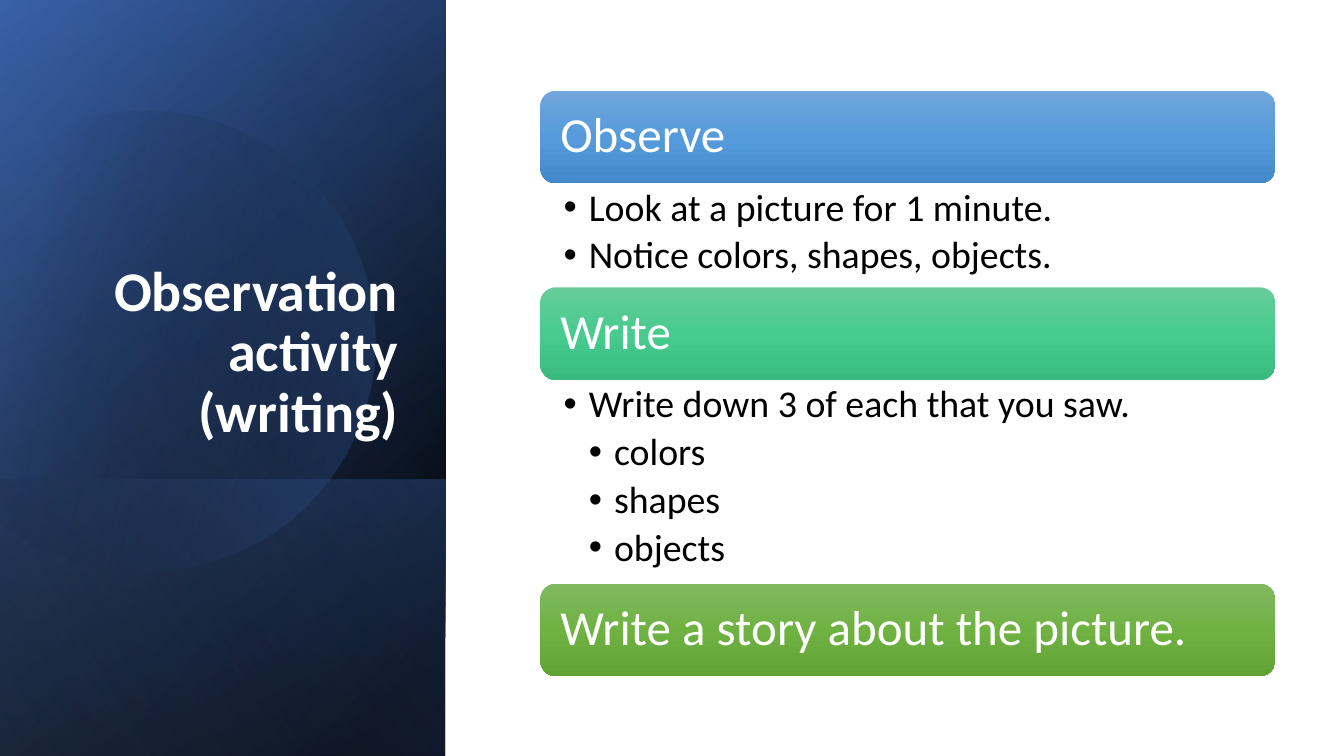
from math import cos, radians, sin

from pptx import Presentation
from pptx.dml.color import RGBColor
from pptx.enum.shapes import MSO_SHAPE
from pptx.enum.text import MSO_ANCHOR, MSO_AUTO_SIZE, PP_ALIGN
from pptx.oxml import parse_xml
from pptx.oxml.ns import nsdecls, qn
from pptx.util import Pt

TITLE = "Observation activity (writing)"
STEPS = [
    ("Observe", [(1, "Look at a picture for 1 minute."),
                 (1, "Notice colors, shapes, objects.")]),
    ("Write", [(1, "Write down 3 of each that you saw."),
               (2, "colors"), (2, "shapes"), (2, "objects")]),
    ("Write a story about the picture.", []),
]

THEME = {
    "font": "Calibri",
    "light": RGBColor(255, 255, 255),
    "dark": RGBColor(0, 0, 0),
    "title_size": 40,
    "heading_size": 35,
    "list_size": 27,
    "headings": [
        [(0, "71A6DB", 100), (50, "559BDB", 100), (100, "448ACA", 100)],
        [(0, "67CC9A", 100), (50, "47CB8E", 100), (100, "39BB7F", 100)],
        [(0, "81B861", 100), (50, "6FB242", 100), (100, "62A336", 100)],
    ],
    "panel_base": [(8, "000000", 100), (100, "2F5597", 100)],
    "panel_glow": [(0, "000000", 0), (99, "4472C4", 46)],
    "panel_foot": [(2, "4472C4", 29), (100, "000000", 30)],
    "panel_disc": [(29, "000000", 0), (100, "4472C4", 43)],
    "panel_sheen": [(0, "000000", 0), (99, "8FAADC", 11)],
}

SLIDE_WIDTH, SLIDE_HEIGHT = 960, 540
PANEL_WIDTH = 318.2
FOOT_TOP = 342.7
STEP_LEFT, STEP_TOP, STEP_WIDTH, HEADING_HEIGHT = 386, 64.8, 525, 66.2
LIST_LINE, LIST_MARGIN = 35.6, 3
INDENT = 18

DISC_TURN = -16.1
DISC_CENTER = (1.585, 3.345)
DISC_START = (1.49, 1.1)
DISC_ARCS = [
    ((2.46, 1.12), (3.35, 1.77), (3.63, 2.75)),
    ((3.98, 3.97), (3.28, 5.23), (2.07, 5.58)),
    ((1.31, 5.8), (0.53, 5.61), (-0.03, 5.14)),
    ((-0.15, 5.03),),
    ((-0.15, 1.75),),
    ((0, 1.61),),
    ((0.23, 1.42), (0.5, 1.28), (0.8, 1.19)),
    ((1.03, 1.13), (1.26, 1.1), (1.49, 1.1)),
]
ARC_STEPS = 16


def paint(shape, stops, angle):
    shape.shadow.inherit = False
    shape.line.fill.background()
    shape.fill.solid()
    stop_xml = "".join(
        f'<a:gs pos="{position * 1000}"><a:srgbClr val="{color}">'
        f'<a:alpha val="{opacity * 1000}"/></a:srgbClr></a:gs>'
        for position, color, opacity in stops)
    gradient = parse_xml(
        f'<a:gradFill {nsdecls("a")} rotWithShape="1"><a:gsLst>{stop_xml}</a:gsLst>'
        f'<a:lin ang="{angle * 60000}" scaled="0"/></a:gradFill>')
    properties = shape._element.spPr
    properties.replace(properties.find(qn("a:solidFill")), gradient)


def place(shape, left, top, width, height):
    shape.left, shape.top = Pt(left), Pt(top)
    shape.width, shape.height = Pt(width), Pt(height)


def set_frame(frame, anchor, left, top, right, bottom):
    frame.word_wrap = True
    frame.auto_size = MSO_AUTO_SIZE.NONE
    frame.vertical_anchor = anchor
    frame.margin_left, frame.margin_top = Pt(left), Pt(top)
    frame.margin_right, frame.margin_bottom = Pt(right), Pt(bottom)


def style(paragraph, size, color, align=PP_ALIGN.LEFT, bold=False):
    paragraph.alignment = align
    paragraph.line_spacing = 0.9
    paragraph.space_before = Pt(0)
    for run in paragraph.runs:
        run.font.name = THEME["font"]
        run.font.size = Pt(size)
        run.font.bold = bold
        run.font.color.rgb = color


def add_panel(shapes, top, stops, angle):
    height = SLIDE_HEIGHT - top
    panel = shapes.add_shape(
        MSO_SHAPE.RECTANGLE, Pt((PANEL_WIDTH - height) / 2),
        Pt(top + (height - PANEL_WIDTH) / 2), Pt(height), Pt(PANEL_WIDTH))
    panel.rotation = 90
    panel._element.spPr.xfrm.set("flipH", "1")
    paint(panel, stops, angle)


def disc_outline():
    points = [DISC_START]
    for arc in DISC_ARCS:
        if len(arc) == 1:
            points.append(arc[0])
            continue
        controls = (points[-1], *arc)
        for step in range(1, ARC_STEPS + 1):
            t = step / ARC_STEPS
            weights = ((1 - t) ** 3, 3 * t * (1 - t) ** 2, 3 * t * t * (1 - t), t ** 3)
            points.append(tuple(
                sum(w * control[axis] for w, control in zip(weights, controls))
                for axis in (0, 1)))
    return points


def unturn(point):
    turn = radians(-DISC_TURN)
    dx, dy = point[0] - DISC_CENTER[0], point[1] - DISC_CENTER[1]
    x = DISC_CENTER[0] + dx * cos(turn) - dy * sin(turn)
    y = DISC_CENTER[1] + dx * sin(turn) + dy * cos(turn)
    return round(x * 7200), round(y * 7200)


def add_disc(shapes):
    outline = [unturn(point) for point in disc_outline()]
    builder = shapes.build_freeform(*outline[0], scale=Pt(1) / 100)
    builder.add_line_segments(outline[1:], close=True)
    disc = builder.convert_to_shape()
    disc.rotation = DISC_TURN
    paint(disc, THEME["panel_disc"], 30)


def add_heading(shapes, heading, top, stops):
    band = shapes.add_shape(MSO_SHAPE.ROUNDED_RECTANGLE, Pt(STEP_LEFT), Pt(top),
                            Pt(STEP_WIDTH), Pt(HEADING_HEIGHT))
    paint(band, stops, 90)
    set_frame(band.text_frame, MSO_ANCHOR.MIDDLE, 11, 11, 11, 11)
    band.text_frame.text = heading
    style(band.text_frame.paragraphs[0], THEME["heading_size"], THEME["light"])


def fill_list(body, items, top, height):
    place(body, STEP_LEFT, top, STEP_WIDTH, height)
    frame = body.text_frame
    set_frame(frame, MSO_ANCHOR.TOP, 16.6, 3.6, 19.4, 3.6)
    frame.text = "\n".join(text for _, text in items)
    for paragraph, (level, _) in zip(frame.paragraphs, items):
        paragraph.level = level
        properties = paragraph._p.get_or_add_pPr()
        properties.set("marL", str(Pt(INDENT * level)))
        properties.set("indent", str(-Pt(INDENT)))
        properties.append(parse_xml(f'<a:buChar {nsdecls("a")} char="•"/>'))
        style(paragraph, THEME["list_size"], THEME["dark"])
        paragraph.space_after = Pt(5)


def main():
    presentation = Presentation()
    presentation.slide_width, presentation.slide_height = Pt(SLIDE_WIDTH), Pt(SLIDE_HEIGHT)
    slide = presentation.slides.add_slide(presentation.slide_layouts[3])
    shapes = slide.shapes
    title, *bodies = slide.placeholders

    add_panel(shapes, 0, THEME["panel_base"], 50)
    add_panel(shapes, 0, THEME["panel_glow"], 30)
    add_panel(shapes, FOOT_TOP, THEME["panel_foot"], 130)
    add_disc(shapes)
    add_panel(shapes, 0, THEME["panel_sheen"], 120)

    shapes._spTree.append(title._element)
    place(title, 46, 132.5, 245.5, 188.6)
    set_frame(title.text_frame, MSO_ANCHOR.BOTTOM, 7.2, 3.6, 7.2, 3.6)
    title.text_frame.text = TITLE
    style(title.text_frame.paragraphs[0], THEME["title_size"], THEME["light"],
          PP_ALIGN.RIGHT, True)

    top = STEP_TOP
    remaining_bodies = iter(bodies)
    for (heading, items), stops in zip(STEPS, THEME["headings"]):
        add_heading(shapes, heading, top, stops)
        top += HEADING_HEIGHT
        if items:
            body = next(remaining_bodies)
            shapes._spTree.append(body._element)
            height = LIST_MARGIN + LIST_LINE * len(items)
            fill_list(body, items, top, height)
            top += height

    presentation.save("out.pptx")


if __name__ == "__main__":
    main()
